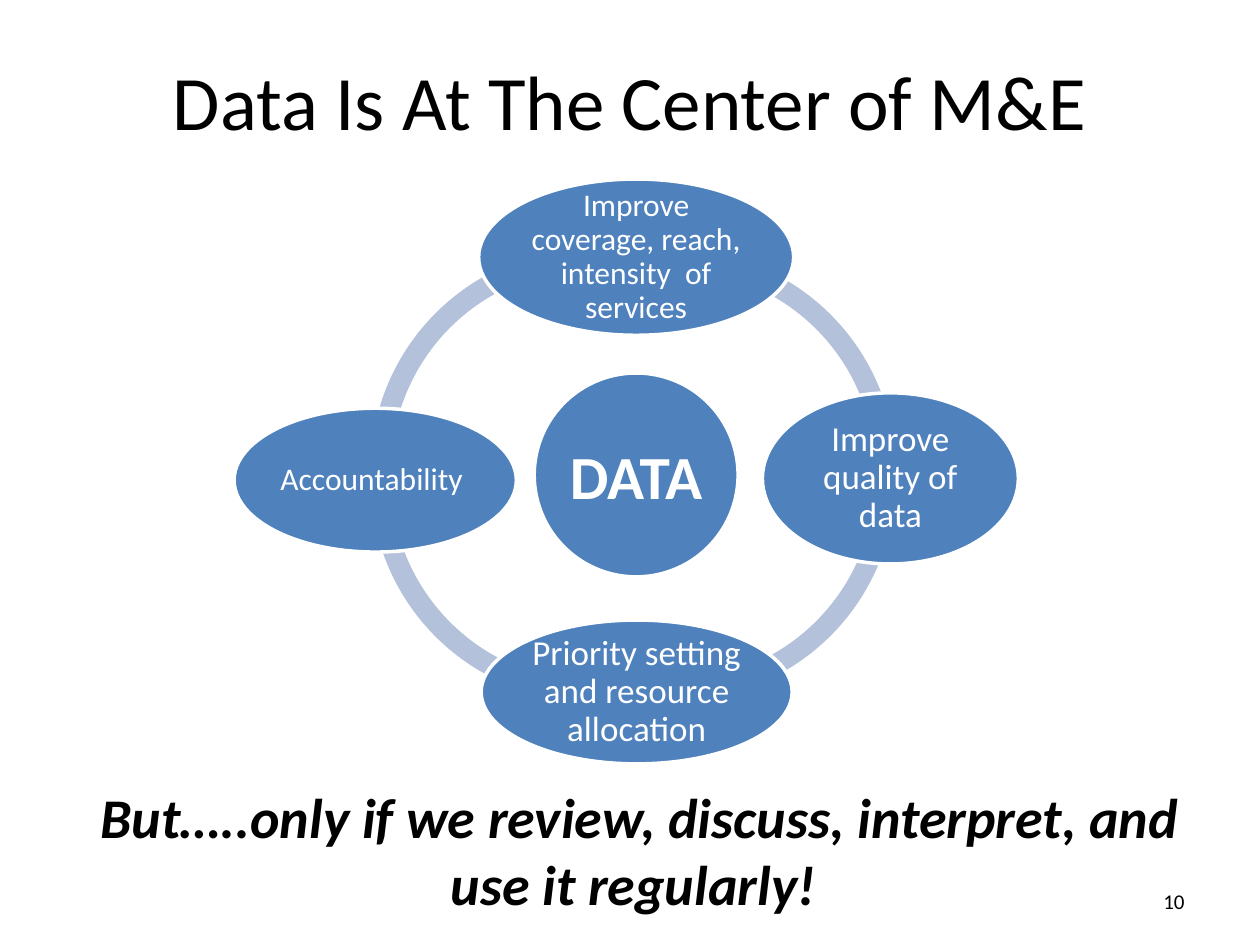
import pptx
import pptx.dml.color
import pptx.enum.shapes
import pptx.enum.text
import pptx.util

Cm = pptx.util.Cm
Pt = pptx.util.Pt
RGBColor = pptx.dml.color.RGBColor
Align = pptx.enum.text.PP_ALIGN
Anchor = pptx.enum.text.MSO_ANCHOR
Shape = pptx.enum.shapes.MSO_SHAPE

BLACK = RGBColor(0x00, 0x00, 0x00)
WHITE = RGBColor(0xFF, 0xFF, 0xFF)
BLUE = RGBColor(0x4F, 0x81, 0xBD)
PALE_BLUE = RGBColor(0xB3, 0xC1, 0xDB)


def write(frame, text, size, color=BLACK, bold=False, italic=False, align=Align.CENTER,
          anchor=Anchor.MIDDLE, spacing=1.0, side=0.25, top=0.13, font="Calibri"):
    frame.word_wrap = True
    frame.vertical_anchor = anchor
    frame.margin_left = frame.margin_right = Cm(side)
    frame.margin_top = frame.margin_bottom = Cm(top)
    paragraph = frame.paragraphs[0]
    paragraph.alignment = align
    paragraph.line_spacing = spacing
    run = paragraph.add_run()
    run.text = text
    run.font.name = font
    run.font.size = Pt(size)
    run.font.bold = bold
    run.font.italic = italic
    run.font.color.rgb = color


class CycleSlide:
    """Draws the parts of a cycle diagram on one slide in a shared style."""

    def __init__(self, slide):
        self.shapes = slide.shapes

    def label(self, box, text, **style):
        area = self.shapes.add_textbox(*map(Cm, box))
        write(area.text_frame, text, **style)

    def filled(self, kind, box, color):
        figure = self.shapes.add_shape(kind, *map(Cm, box))
        figure.shadow.inherit = False
        figure.fill.solid()
        figure.fill.fore_color.rgb = color
        figure.line.fill.background()
        return figure

    def arc(self, left, top, start, end, diameter=8.97, thickness=0.046):
        ring = self.filled(Shape.BLOCK_ARC, (left, top, diameter, diameter), PALE_BLUE)
        for index, value in enumerate((start, end, thickness)):
            ring.adjustments[index] = value

    def bubble(self, box, text, size, **style):
        oval = self.filled(Shape.OVAL, box, BLUE)
        oval.line.color.rgb = WHITE
        oval.line.width = Pt(2)
        write(oval.text_frame, text, size, color=WHITE, **style)


def main():
    deck = pptx.Presentation()
    deck.slide_width = Cm(25.4)
    deck.slide_height = Cm(19.05)
    cycle = CycleSlide(deck.slides.add_slide(deck.slide_layouts[6]))

    cycle.label((1.27, 0.76, 22.86, 2.49), "Data Is At The Center of M&E", size=44)

    for left, top, start, end in (
        (7.47, 5.0, 106.56, 168.98),
        (7.47, 5.18, 47.05, 107.96),
        (9.09, 5.16, 0.24, 59.88),
        (9.09, 5.03, 156.1, 1.24),
    ):
        cycle.arc(left, top, start, end)

    cycle.bubble((10.77, 7.52, 4.11, 4.11), "DATA", 35, bold=True, side=0)
    for box, goal, size in (
        ((9.65, 3.61, 6.35, 3.15), "Improve coverage, reach, intensity  of services", 18),
        ((15.37, 7.92, 5.16, 3.45), "Improve quality of data", 20),
        ((9.7, 12.5, 6.27, 2.9), "Priority setting and resource allocation", 20),
        ((4.72, 8.23, 5.69, 2.9), "Accountability ", 18),
    ):
        cycle.bubble(box, goal, size, spacing=0.9, side=0.08, top=0.08)

    cycle.label((1.47, 15.65, 22.86, 3.0),
                "But…..only if we review, discuss, interpret, and use it regularly! ",
                size=32, bold=True, italic=True, anchor=Anchor.TOP)
    cycle.label((18.21, 17.65, 5.92, 1.02), "10", size=12, align=Align.RIGHT)

    deck.save("out.pptx")


if __name__ == "__main__":
    main()
